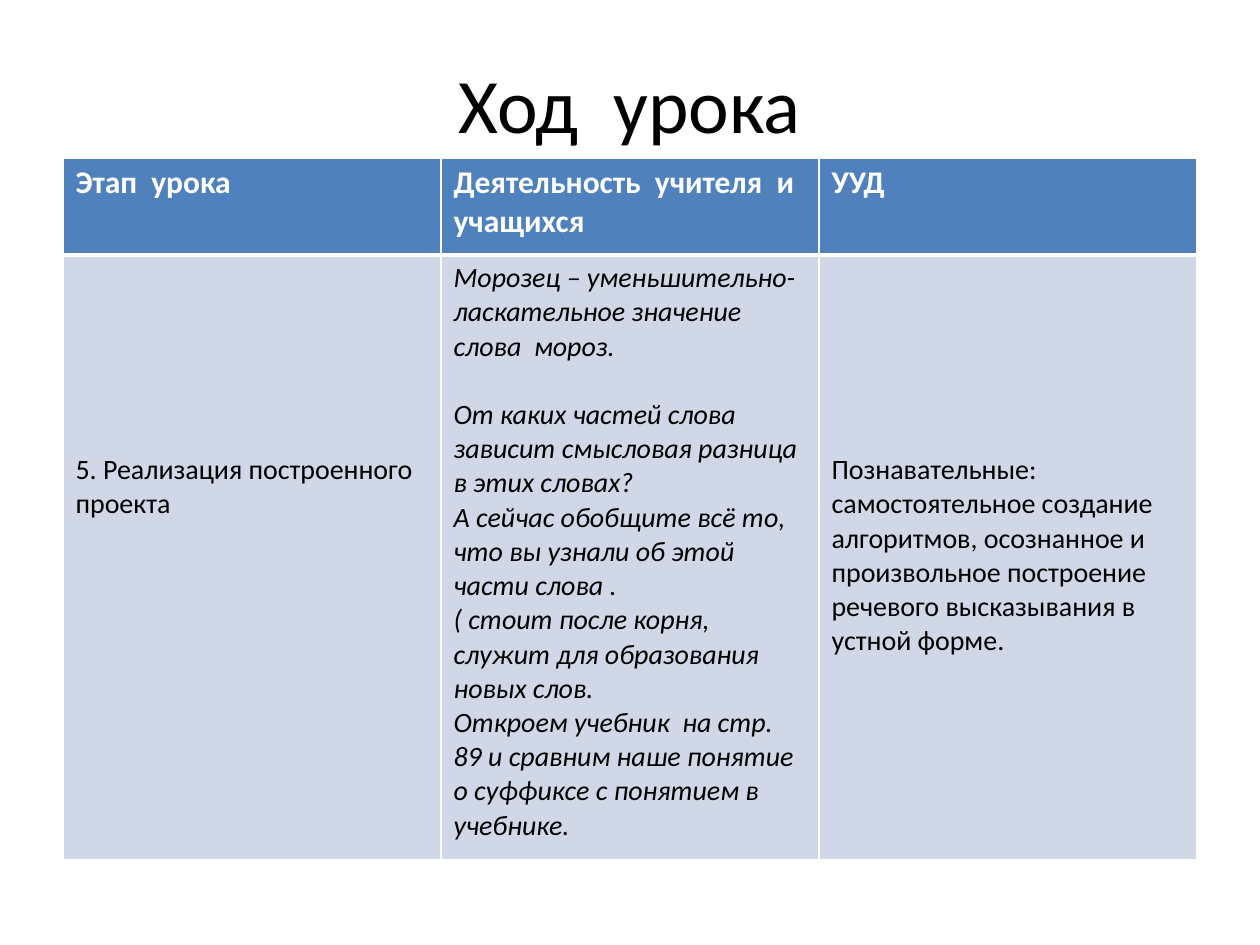
"""Build the lesson-plan slide: a title above a three-column table."""
from lxml import etree
from pptx import Presentation
from pptx.dml.color import RGBColor
from pptx.enum.text import MSO_ANCHOR as Anchor, PP_ALIGN as Align
from pptx.oxml.ns import qn
from pptx.util import Emu, Pt

TITLE = "Ход  урока"
HEADERS = ["Этап  урока", "Деятельность  учителя  и  учащихся", "УУД"]
STAGE = ["5. Реализация построенного проекта"]
ACTIVITY = [
    "Морозец – уменьшительно- ласкательное значение слова  мороз.",
    "От каких частей слова зависит смысловая разница в этих словах?",
    "А сейчас обобщите всё то, что вы узнали об этой части слова .",
    "( стоит после корня, служит для образования новых слов.",
    "Откроем учебник  на стр. 89 и сравним наше понятие о суффиксе с понятием в учебнике.",
]
SKILLS = ["Познавательные: самостоятельное создание алгоритмов, осознанное и "
          "произвольное построение речевого высказывания в устной форме."]

BLACK, WHITE, BLUE, PALE = "000000", "FFFFFF", "4F81BD", "D0D8E8"
TITLE_FONT = {"name": "Calibri", "size": Pt(44), "bold": False}
HEADER_FONT = {"name": "Calibri", "size": Pt(18), "bold": True}
BODY_FONT = {"name": "Calibri", "size": Pt(16), "bold": False, "italic": False}
ACTIVITY_FONT = {**BODY_FONT, "italic": True}

SLIDE_SIZE = (1260, 945)
TITLE_BOX = (63, 38, 1134, 130)
TABLE_BOX = (63, 158, 1134, 702)
ROW_HEIGHTS = [97, 605]
CELL_TOP, LOWERED_TOP = 6, 198
ACTIVITY_GAP = Pt(19.5)
HEADER_BORDERS = {"a:lnL": 1, "a:lnR": 1, "a:lnT": 1, "a:lnB": 3}
BODY_BORDERS = {"a:lnL": 1, "a:lnR": 1, "a:lnT": 3, "a:lnB": 1}

ROWS = [
    [(BLUE, WHITE, HEADER_FONT, HEADER_BORDERS, CELL_TOP, [header]) for header in HEADERS],
    [(PALE, BLACK, font, BODY_BORDERS, top, lines) for font, top, lines in (
        (BODY_FONT, LOWERED_TOP, STAGE),
        (ACTIVITY_FONT, CELL_TOP, ACTIVITY),
        (BODY_FONT, LOWERED_TOP, SKILLS))],
]


def px(value):
    return Emu(round(value * 914400 / 126))


def color(value):
    return RGBColor.from_string(value)


def write(frame, lines, font, text_color):
    for index, line in enumerate(lines):
        paragraph = frame.paragraphs[0] if index == 0 else frame.add_paragraph()
        run = paragraph.add_run()
        run.text = line
        for name, value in font.items():
            setattr(run.font, name, value)
        run.font.color.rgb = color(text_color)


def set_borders(cell, borders):
    properties = cell._tc.get_or_add_tcPr()
    for index, (tag, width) in enumerate(borders.items()):
        line = etree.Element(qn(tag), w=str(Pt(width)))
        fill = etree.SubElement(line, qn("a:solidFill"))
        etree.SubElement(fill, qn("a:srgbClr"), val=WHITE)
        properties.insert(index, line)


def add_title(slide):
    frame = slide.shapes.add_textbox(*map(px, TITLE_BOX)).text_frame
    frame.word_wrap = True
    frame.vertical_anchor = Anchor.MIDDLE
    write(frame, [TITLE], TITLE_FONT, BLACK)
    frame.paragraphs[0].alignment = Align.CENTER


def add_lesson_table(slide):
    table = slide.shapes.add_table(len(ROWS), len(HEADERS), *map(px, TABLE_BOX)).table
    for column in table.columns:
        column.width = px(TABLE_BOX[2] // len(HEADERS))
    for row, height, contents in zip(table.rows, ROW_HEIGHTS, ROWS):
        row.height = px(height)
        for cell, (fill, text_color, font, borders, top, lines) in zip(row.cells, contents):
            cell.fill.solid()
            cell.fill.fore_color.rgb = color(fill)
            cell.margin_top = px(top)
            set_borders(cell, borders)
            write(cell.text_frame, lines, font, text_color)
    table.cell(1, 1).text_frame.paragraphs[1].space_before = ACTIVITY_GAP


def main():
    presentation = Presentation()
    presentation.slide_width, presentation.slide_height = map(px, SLIDE_SIZE)
    slide = presentation.slides.add_slide(presentation.slide_layouts[6])
    add_title(slide)
    add_lesson_table(slide)
    presentation.save("out.pptx")


if __name__ == "__main__":
    main()
